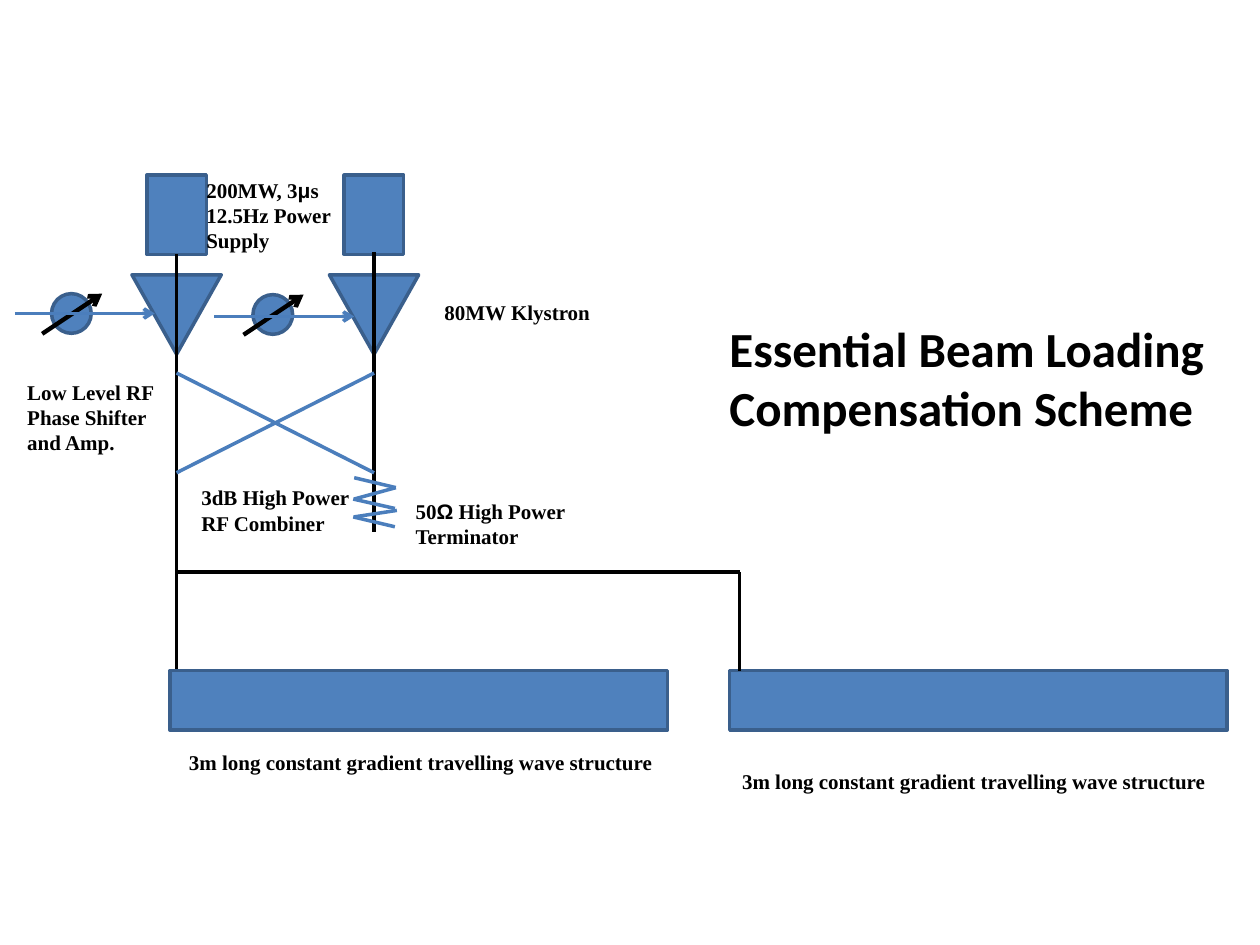
from dataclasses import dataclass
from itertools import groupby

from lxml import etree
from pptx import Presentation
from pptx import util as u
from pptx.dml.color import RGBColor
from pptx.enum import shapes, text
from pptx.oxml import ns


@dataclass(frozen=True)
class Theme:
    """Colours, fonts and sizes of the diagram."""

    fill: RGBColor = RGBColor(0x4F, 0x81, 0xBD)
    outline: RGBColor = RGBColor(0x3A, 0x5F, 0x8C)
    signal: RGBColor = RGBColor(0x4B, 0x7E, 0xBC)
    black: RGBColor = RGBColor(0, 0, 0)
    title_font: str = "Calibri"
    label_font: str = "Times New Roman"
    symbol_font: str = "Arial"
    title_size: int = 28
    label_size: int = 12
    line_width: float = 2
    arrow_width: float = 2.5


class Diagram:
    """Draws styled elements on one slide, with lengths in centimetres."""

    def __init__(self, slide, theme):
        self.slide = slide
        self.theme = theme

    def block(self, kind, left, top, width, height, rotation=0):
        """Add a filled, outlined preset shape."""
        shape = self.slide.shapes.add_shape(
            kind, u.Cm(left), u.Cm(top), u.Cm(width), u.Cm(height))
        shape.rotation = rotation
        shape.shadow.inherit = False
        shape.fill.solid()
        shape.fill.fore_color.rgb = self.theme.fill
        shape.line.color.rgb = self.theme.outline
        shape.line.width = u.Pt(self.theme.line_width)

    def line(self, start, end, color, width=None, arrow=False):
        """Add a straight line, optionally with an open arrowhead at its end."""
        connector = self.slide.shapes.add_connector(
            shapes.MSO_CONNECTOR.STRAIGHT, *(u.Cm(value) for value in (*start, *end)))
        connector.line.color.rgb = color
        connector.line.width = u.Pt(width or self.theme.line_width)
        properties = connector._element.spPr
        if arrow:
            outline = properties.find(ns.qn("a:ln"))
            etree.SubElement(outline, ns.qn("a:tailEnd"), type="arrow")
        etree.SubElement(properties, ns.qn("a:effectLst"))

    def label(self, content, left, top, width, height):
        """Add a bold label whose Greek letters use the symbol font."""
        shape = self.slide.shapes.add_textbox(
            u.Cm(left), u.Cm(top), u.Cm(width), u.Cm(height))
        frame = shape.text_frame
        frame.word_wrap = False
        frame.auto_size = text.MSO_AUTO_SIZE.SHAPE_TO_FIT_TEXT
        frame.text = content
        for paragraph in frame.paragraphs:
            line = paragraph.text
            paragraph.clear()
            for is_symbol, letters in groupby(line, key=lambda letter: letter in "μΩ"):
                run = paragraph.add_run()
                run.text = "".join(letters)
                name = self.theme.symbol_font if is_symbol else self.theme.label_font
                self.format_font(run.font, name, self.theme.label_size)

    def title(self, content, left, top, width, height):
        """Place and format the title placeholder."""
        shape = self.slide.shapes.title
        shape.left, shape.top = u.Cm(left), u.Cm(top)
        shape.width, shape.height = u.Cm(width), u.Cm(height)
        frame = shape.text_frame
        frame.word_wrap = False
        frame.auto_size = text.MSO_AUTO_SIZE.NONE
        frame.vertical_anchor = text.MSO_ANCHOR.TOP
        frame.text = content
        for paragraph in frame.paragraphs:
            paragraph.alignment = text.PP_ALIGN.LEFT
            for run in paragraph.runs:
                self.format_font(run.font, self.theme.title_font, self.theme.title_size)

    def format_font(self, font, name, size):
        """Apply the common bold black style."""
        font.name = name
        font.size = u.Pt(size)
        font.bold = True
        font.color.rgb = self.theme.black

    def phase_shifter(self, left, top):
        """Add a circle crossed by a diagonal arrow."""
        self.block(shapes.MSO_SHAPE.OVAL, left, top, 0.8, 0.8)
        self.line((left - 0.19, top + 0.81), (left + 1.02, top),
                  self.theme.black, self.theme.arrow_width, arrow=True)


def main():
    """Build and save the beam loading slide."""
    presentation = Presentation()
    presentation.slide_width, presentation.slide_height = u.Cm(25.4), u.Cm(19.05)
    slide = presentation.slides.add_slide(presentation.slide_layouts[5])
    theme = Theme()
    diagram = Diagram(slide, theme)
    diagram.title("Essential Beam Loading\nCompensation Scheme", 14.45, 6.3, 10.44, 2.64)

    feed_x, load_x, branch_x = 3.56, 7.54, 14.91
    branch_y, structure_y = 11.53, 13.52
    combiner_top, combiner_bottom = 7.52, 9.53

    for center in (feed_x, load_x):
        diagram.block(shapes.MSO_SHAPE.ISOSCELES_TRIANGLE, center - 0.9, 5.54, 1.8, 1.6, 180)
        diagram.block(shapes.MSO_SHAPE.RECTANGLE, center - 0.6, 3.53, 1.2, 1.6)
    for left, top in ((1.04, 5.92), (5.1, 5.94)):
        diagram.phase_shifter(left, top)

    waveguides = (
        ((feed_x, 5.13), (feed_x, structure_y)),
        ((load_x, 5.08), (load_x, 10.72)),
        ((feed_x, branch_y), (branch_x, branch_y)),
    )
    for start, end in waveguides:
        diagram.line(start, end, theme.black)
    for left in (3.43, 14.71):
        diagram.block(shapes.MSO_SHAPE.RECTANGLE, left, structure_y, 10.03, 1.2)
    diagram.line((branch_x, branch_y), (branch_x, structure_y), theme.black)

    combiner = (
        ((feed_x, combiner_top), (load_x, combiner_bottom)),
        ((feed_x, combiner_bottom), (load_x, combiner_top)),
    )
    terminator = (
        ((7.14, 9.63), (7.98, 9.83)),
        ((7.12, 10.06), (7.96, 10.25)),
        ((7.12, 10.42), (7.96, 10.62)),
        ((7.14, 10.06), (7.98, 9.83)),
        ((7.14, 10.42), (8, 10.29)),
    )
    for start, end in combiner + terminator:
        diagram.line(start, end, theme.signal)
    for left, top in ((0.3, 6.32), (4.32, 6.38)):
        diagram.line((left, top), (left + 2.82, top), theme.signal, arrow=True)

    structure = "3m long constant gradient travelling wave structure"
    labels = (
        ("200MW, 3μs\n12.5Hz Power\nSupply", 3.91, 3.45, 3.15, 1.8),
        ("Low Level RF\nPhase Shifter\nand Amp.", 0.3, 7.52, 3.1, 1.8),
        ("3dB High Power\nRF Combiner", 3.81, 9.65, 3.53, 1.3),
        ("50Ω High Power\nTerminator", 8.13, 9.93, 3.66, 1.3),
        ("80MW Klystron", 8.71, 5.92, 3.48, 0.76),
        (structure, 3.56, 14.99, 9.96, 0.76),
        (structure, 14.71, 15.37, 9.96, 0.76),
    )
    for label in labels:
        diagram.label(*label)

    presentation.save("out.pptx")


if __name__ == "__main__":
    main()
